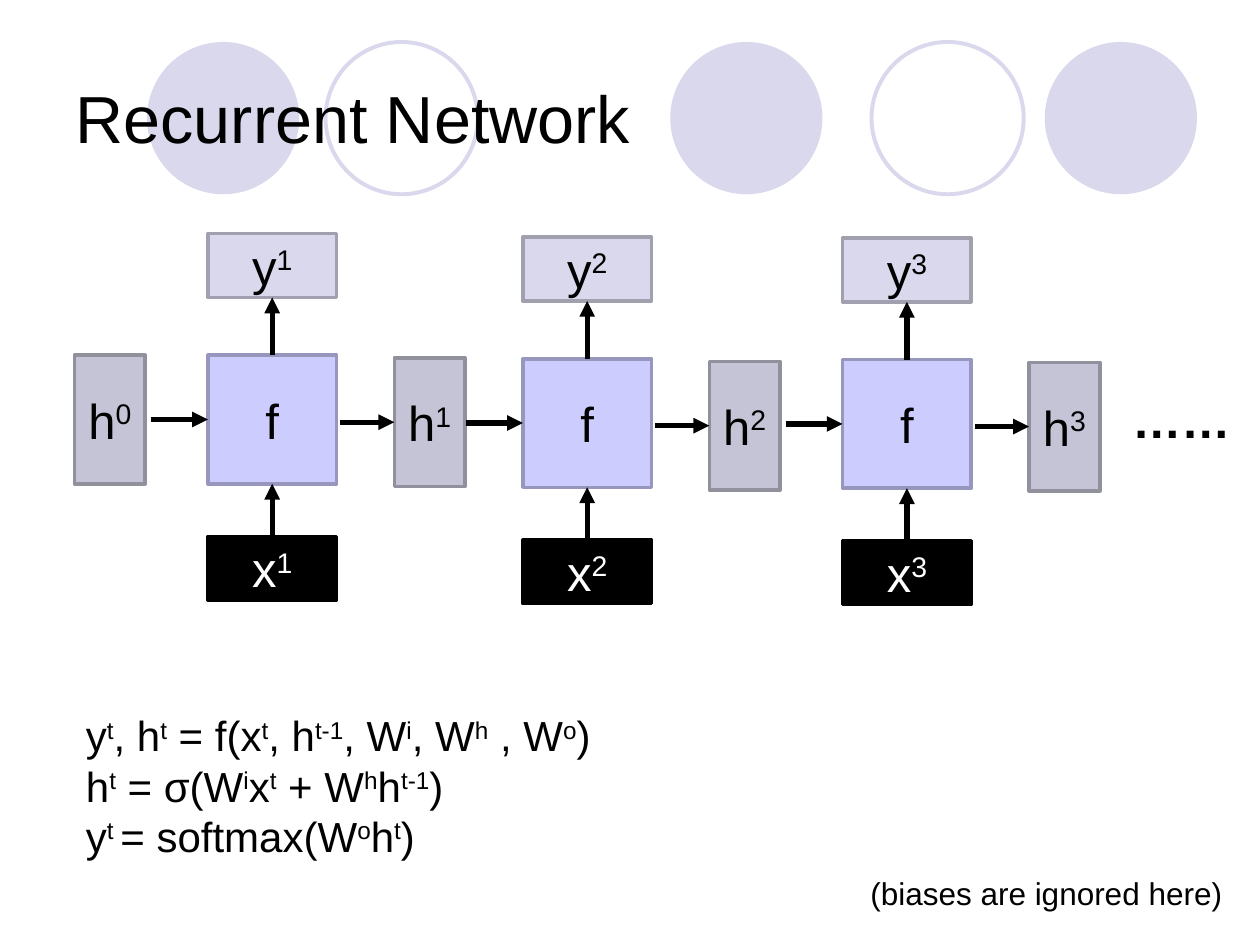
"""Build a slide that unrolls a recurrent network over three time steps."""
from dataclasses import dataclass

from lxml.etree import SubElement
from pptx import Presentation
from pptx.dml.color import RGBColor
from pptx.enum.shapes import MSO_CONNECTOR as Link, MSO_SHAPE as Preset
from pptx.enum.text import MSO_ANCHOR as Anchor, PP_ALIGN as Align
from pptx.oxml.ns import qn
from pptx.util import Pt

TOP, LEFT, BOTTOM, RIGHT = range(4)


@dataclass(frozen=True)
class Theme:
    """Colours and type sizes of the deck."""
    font: str = "Arial"
    ink: str = "000000"
    paper: str = "FFFFFF"
    circle: str = "D9D8EC"
    cell: tuple = ("CCCCFF", "9797BD")
    hidden: tuple = ("C4C4D6", "91919E")
    output: tuple = ("D9D8EC", "A1A0AF")
    input: tuple = ("000000", "000000")
    title: int = 38
    label: int = 28
    formula: int = 24
    note: int = 18


def write(frame, text, size, color, font, align=Align.LEFT, bold=False, anchor=Anchor.TOP):
    """Write lines of text, raising each part held between two carets."""
    frame.vertical_anchor = anchor
    for number, line in enumerate(text.split("\n")):
        para = frame.add_paragraph() if number else frame.paragraphs[0]
        para.alignment = align
        for order, part in enumerate(line.split("^")):
            if not part:
                continue
            span = para.add_run()
            span.text = part
            span.font.name = font
            span.font.size = Pt(size)
            span.font.bold = bold
            span.font.color.rgb = RGBColor.from_string(color)
            if order % 2:
                span._r.get_or_add_rPr().set("baseline", "30000")


class Page:
    """A slide together with the style it is drawn in."""

    def __init__(self, deck, theme):
        """Add a slide with a title to the deck."""
        self.theme = theme
        self.slide = deck.slides.add_slide(deck.slide_layouts[5])
        self.shapes = self.slide.shapes

    def title(self, text, left, top, width, height):
        """Fill the title placeholder and bring it to the front."""
        box = self.shapes.title
        box.left, box.top, box.width, box.height = map(Pt, (left, top, width, height))
        write(box.text_frame, text, self.theme.title, self.theme.ink, self.theme.font,
              anchor=Anchor.MIDDLE)
        self.shapes._spTree.append(box._element)

    def shape(self, preset, left, top, width, height, fill=None, line=None, weight=2):
        """Draw a flat preset shape."""
        shape = self.shapes.add_shape(preset, *map(Pt, (left, top, width, height)))
        shape.shadow.inherit = False
        if fill:
            shape.fill.solid()
            shape.fill.fore_color.rgb = RGBColor.from_string(fill)
        else:
            shape.fill.background()
        if line:
            shape.line.color.rgb = RGBColor.from_string(line)
            shape.line.width = Pt(weight)
        else:
            shape.line.fill.background()
        return shape

    def block(self, text, left, top, width, height, colors, ink=None):
        """Draw a labelled rectangle."""
        box = self.shape(Preset.RECTANGLE, left, top, width, height, *colors)
        box.text_frame.margin_left = box.text_frame.margin_right = 0
        write(box.text_frame, text, self.theme.label, ink or self.theme.ink,
              self.theme.font, align=Align.CENTER, anchor=Anchor.MIDDLE)
        return box

    def arrow(self, start, end, target, target_side, source=None, source_side=None):
        """Draw an arrow joined to its target and, if given, its source."""
        arrow = self.shapes.add_connector(Link.STRAIGHT, *map(Pt, (*start, *end)))
        arrow.line.color.rgb = RGBColor.from_string(self.theme.ink)
        arrow.line.width = Pt(3)
        SubElement(arrow.line._get_or_add_ln(), qn("a:tailEnd"), type="triangle")
        SubElement(arrow._element.spPr, qn("a:effectLst"))
        if source is not None:
            arrow.begin_connect(source, source_side)
        arrow.end_connect(target, target_side)

    def text(self, text, left, top, width, height, size, wrap=True, **style):
        """Add a free text box."""
        box = self.shapes.add_textbox(*map(Pt, (left, top, width, height)))
        box.text_frame.word_wrap = wrap
        write(box.text_frame, text, size, self.theme.ink, self.theme.font, **style)

    def step(self, number, left, top, feed):
        """Draw one time step, fed by an arrow that starts at feed."""
        theme, side, low, narrow = self.theme, 73.5, 36.5, 40.5
        middle = left + side / 2
        cell = self.block("f", left, top, side, side, theme.cell)
        state = self.block(f"h^{number}^", left + 106.5, top + 1.5, narrow, side, theme.hidden)
        result = self.block(f"y^{number}^", left, top - 69.5, side, low, theme.output)
        source = self.block(f"x^{number}^", left, top + 103.5, side, low, theme.input,
                            theme.paper)
        center = top + side / 2
        self.arrow((feed, center), (left, center), cell, LEFT)
        self.arrow((left + 75.5, center + 1.5), (left + 106.5, center + 1.5), state, LEFT)
        self.arrow((middle, top), (middle, top - 33), result, BOTTOM, cell, TOP)
        self.arrow((middle, top + 103.5), (middle, top + side), cell, BOTTOM, source, TOP)


def main():
    """Compose the slide and save it."""
    deck = Presentation()
    deck.slide_width, deck.slide_height = Pt(720), Pt(540)
    theme = Theme()
    page = Page(deck, theme)

    for left in (383, 597, 84):
        page.shape(Preset.OVAL, left, 24, 87, 87, fill=theme.circle)
    for left in (498, 186):
        page.shape(Preset.OVAL, left, 24, 87, 87, line=theme.circle, weight=2.25)
    page.title("Recurrent Network", 36, 21.6, 648, 90)

    page.block("h^0^", 42.5, 203, 40.5, 73.5, theme.hidden)
    steps = ((118.8, 203, 86.5), (298.8, 205, 266.5), (481.5, 205.5, 449))
    for number, (left, top, feed) in enumerate(steps, start=1):
        page.step(number, left, top, feed)

    page.text("……", 640, 219, 73.5, 41, theme.label, bold=True)
    page.text("(biases are ignored here)", 480, 496, 225.5, 29, theme.note,
              align=Align.RIGHT)
    page.text("y^t^, h^t^ = f(x^t^, h^t-1^, W^i^, W^h^ , W^o^)\n"
              "h^t^ = σ(W^i^x^t^ + W^h^h^t-1^)\n"
              "y^t ^= softmax(W^o^h^t^)",
              42, 402, 314, 94, theme.formula, wrap=False)
    deck.save("out.pptx")


if __name__ == "__main__":
    main()
